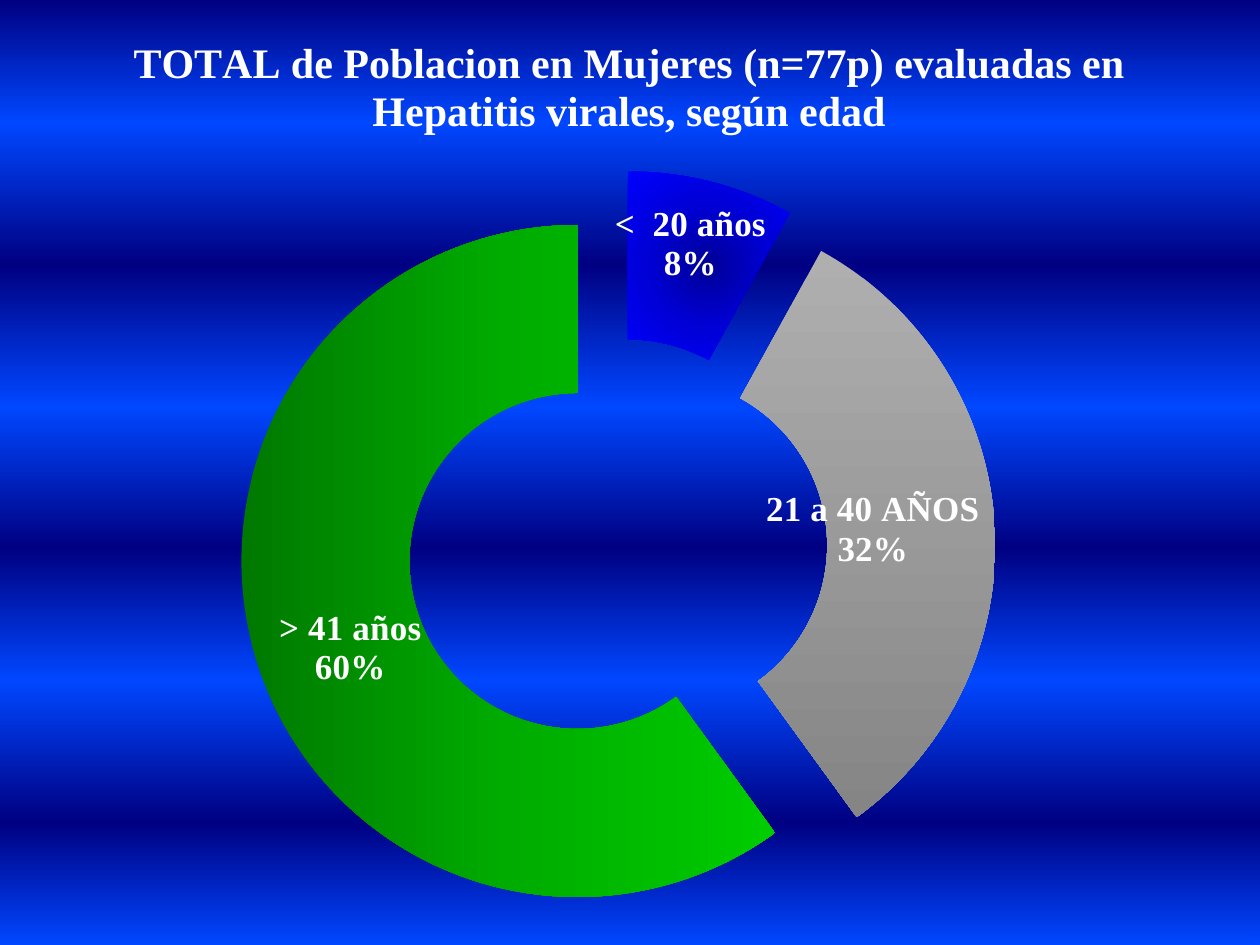
from dataclasses import dataclass

from lxml.etree import SubElement
from pptx import Presentation
from pptx.chart.data import CategoryChartData
from pptx.dml.color import RGBColor
from pptx.enum.chart import XL_CHART_TYPE
from pptx.oxml import parse_xml
from pptx.oxml.ns import nsdecls, qn
from pptx.util import Inches, Pt

WHITE = "FFFFFF"
LABEL_FONT = "Times New Roman"
LINEAR = "linear"
CIRCLE = "circle"
Stops = list[tuple[int, str]]


@dataclass
class AgeGroup:
    category: str
    percent: int
    label: str
    label_shift: tuple[float, float]
    stops: Stops
    shading: str = LINEAR
    angle: int = 0


AGE_GROUPS = [
    AgeGroup("MENOS DE 20 AÑOS", 8, "<  20 años", (0, -0.02),
             [(0, "000097"), (50, "0000D7"), (100, "0000FF")], CIRCLE),
    AgeGroup("21 A 40 AÑOS", 32, "21 a 40 AÑOS", (-0.03, 0),
             [(0, "AFAFAF"), (100, "858585")], angle=90),
    AgeGroup("41 Y MÁS AÑOS", 60, "> 41 años", (0.01, 0.01),
             [(0, "007900"), (50, "00AC00"), (100, "00CC00")]),
]
NAVY, BRIGHT_BLUE = "000082", "0047FF"
BACKGROUND_STOPS = [
    (position, BRIGHT_BLUE if index % 2 else NAVY)
    for index, position in enumerate([0, 13, 28, 43, 58, 72, 87, 100])
]


def color(value: str) -> RGBColor:
    return RGBColor.from_string(value)


def set_gradient(element, stops: Stops, shading: str = LINEAR, angle: int = 0) -> None:
    """Replace the stops and direction of an a:gradFill element."""
    for child in list(element):
        element.remove(child)
    stop_list = SubElement(element, qn("a:gsLst"))
    for position, value in stops:
        stop = SubElement(stop_list, qn("a:gs"), pos=str(position * 1000))
        SubElement(stop, qn("a:srgbClr"), val=value)
    if shading == CIRCLE:
        center = SubElement(element, qn("a:path"), path=CIRCLE)
        SubElement(center, qn("a:fillToRect"), dict.fromkeys("ltrb", "50000"))
    else:
        SubElement(element, qn("a:lin"), ang=str(angle * 60000), scaled="0")


def manual_layout(left: float, top: float, size: tuple[float, float] | None = None,
                  edge: bool = True, inner: bool = False):
    """Return a c:layout element whose values are fractions of the chart."""
    parts = ['<c:layoutTarget val="inner"/>'] if inner else []
    if edge:
        parts += ['<c:xMode val="edge"/>', '<c:yMode val="edge"/>']
    parts += [f'<c:x val="{left}"/>', f'<c:y val="{top}"/>']
    if size:
        parts += [f'<c:w val="{size[0]}"/>', f'<c:h val="{size[1]}"/>']
    return parse_xml(f'<c:layout {nsdecls("c")}><c:manualLayout>'
                     f'{"".join(parts)}</c:manualLayout></c:layout>')


def add_text(paragraph, text: str, size: int) -> None:
    run = paragraph.add_run()
    run.text = text
    run.font.name = LABEL_FONT
    run.font.size = Pt(size)
    run.font.bold = True
    run.font.color.rgb = color(WHITE)


def add_title(chart, text: str) -> None:
    chart.has_title = True
    add_text(chart.chart_title.text_frame.paragraphs[0], text, 24)
    title = chart.element.xpath("c:chart/c:title")[0]
    for old_layout in title.findall(qn("c:layout")):
        title.remove(old_layout)
    title.find(qn("c:tx")).addnext(manual_layout(0.1, 0.03))


def format_group(point, group: AgeGroup) -> None:
    point.format.fill.gradient()
    point.format.line.fill.background()
    text_frame = point.data_label.text_frame
    add_text(text_frame.paragraphs[0], group.label, 20)
    add_text(text_frame.add_paragraph(), f"{group.percent}%", 20)


def add_age_chart(slide, width: int, height: int) -> None:
    data = CategoryChartData()
    data.categories = [group.category for group in AGE_GROUPS]
    data.add_series("Series 1", [group.percent for group in AGE_GROUPS])
    chart = slide.shapes.add_chart(
        XL_CHART_TYPE.DOUGHNUT_EXPLODED, 0, 0, width, height, data).chart
    chart.has_legend = False
    chart.font.name = "Calibri"
    chart.font.size = Pt(18)
    chart.font.color.rgb = color(WHITE)

    plot = chart.plots[0]
    plot.vary_by_categories = True
    plot.has_data_labels = True
    labels = plot.data_labels
    labels.show_category_name = True
    labels.show_percentage = True
    labels.show_value = False
    labels.font.name = LABEL_FONT
    labels.font.size = Pt(20)
    labels.font.bold = True

    points = plot.series[0].points
    for index, group in enumerate(AGE_GROUPS):
        format_group(points[index], group)
    gradients = chart.element.xpath(".//c:dPt/c:spPr/a:gradFill")
    label_indexes = chart.element.xpath(".//c:ser/c:dLbls/c:dLbl/c:idx")
    for group, gradient, label_index in zip(AGE_GROUPS, gradients, label_indexes):
        set_gradient(gradient, group.stops, group.shading, group.angle)
        label_index.addnext(manual_layout(*group.label_shift, edge=False))

    plot_area = chart.element.xpath("c:chart/c:plotArea")[0]
    for old_layout in plot_area.findall(qn("c:layout")):
        plot_area.remove(old_layout)
    plot_area.insert(0, manual_layout(0.19, 0.18, (0.6, 0.8), inner=True))
    add_title(chart, "TOTAL de Poblacion en Mujeres (n=77p) evaluadas en "
                     "Hepatitis virales, según edad")


def main() -> None:
    presentation = Presentation()
    presentation.slide_width = Inches(10)
    presentation.slide_height = Inches(7.5)
    slide = presentation.slides.add_slide(presentation.slide_layouts[6])
    slide.background.fill.gradient()
    set_gradient(slide.element.xpath(".//p:bgPr/a:gradFill")[0],
                 BACKGROUND_STOPS, angle=90)
    add_age_chart(slide, presentation.slide_width, presentation.slide_height)
    presentation.save("out.pptx")


if __name__ == "__main__":
    main()
